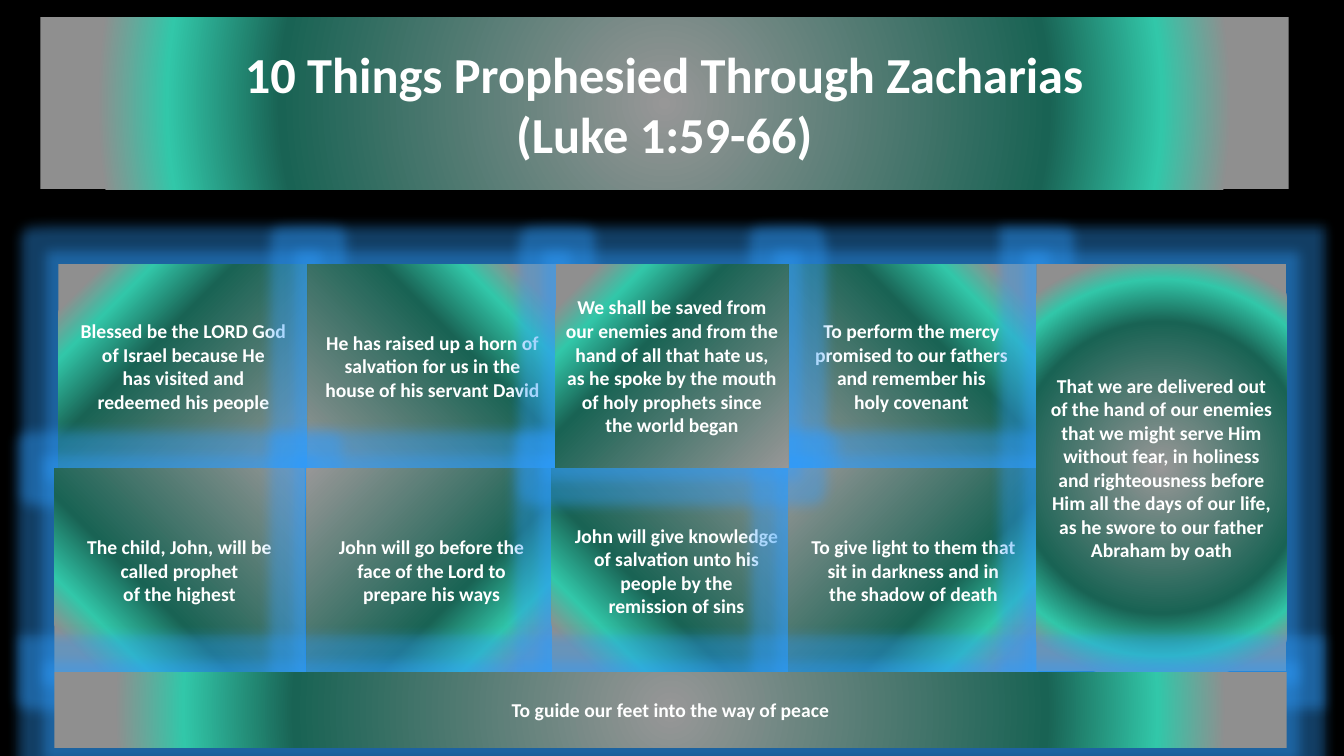
from dataclasses import dataclass

from pptx import Presentation
from pptx.dml.color import RGBColor
from pptx.enum.shapes import MSO_SHAPE as Shape
from pptx.enum.text import MSO_ANCHOR as Anchor, PP_ALIGN as Align
from pptx.oxml import parse_xml
from pptx.oxml.ns import nsdecls, qn
from pptx.util import Inches, Pt


@dataclass(frozen=True)
class Theme:
    """Colours, font and type sizes of the slide."""
    back: str = "000000"
    text: str = "FFFFFF"
    glow: str = "2E9CFC"
    stops: tuple = ((0, "979797"), (61, "196354"), (79, "32C7A9"), (90, "8F8F8F"))
    font: str = "Calibri"
    title: int = 36
    body: int = 14


THEME = Theme()
CENTRE = (50, 50, 50, 50)
BOTTOM_RIGHT = (100, 100, 0, 0)
BOTTOM_LEFT = (0, 100, 100, 0)
TOP_RIGHT = (100, 0, 0, 100)
TOP_LEFT = (0, 0, 100, 100)

TOP, ROW, CARD_W, CARD_H = 2.62, 2.03, 2.48, 2.02
CARDS = [
    (0.58, 0, CARD_W, BOTTOM_RIGHT, ["Blessed be the LORD God", "of Israel because He",
                                     "has visited and", "redeemed his people"]),
    (7.8, 0, CARD_W, BOTTOM_LEFT, ["To perform the mercy promised to our fathers",
                                   "and remember his", "holy covenant"]),
    (3.05, 0, CARD_W, BOTTOM_LEFT, ["He has raised up a horn of salvation for us in the",
                                    "house of his servant David"]),
    (0.54, 1, CARD_W, TOP_RIGHT, ["The child, John, will be called prophet",
                                  "of the highest"]),
    (3.04, 1, CARD_W, TOP_LEFT, ["John will go before the", "face of the Lord to",
                                 "prepare his ways"]),
    (5.47, 1, CARD_W, TOP_RIGHT, ["John will give knowledge", "of salvation unto his",
                                  "people by the", "remission of sins"]),
    (7.82, 1, CARD_W, TOP_LEFT, ["To give light to them that", "sit in darkness and in",
                                 "the shadow of death"]),
]
MIDDLE_CARD = (5.51, 0, 2.31, BOTTOM_RIGHT, [
    "We shall be saved from our enemies and from the hand of all that hate us, "
    "as he spoke by the mouth", "of holy prophets since", "the world began"])
OATH = ["That we are delivered out of the hand of our enemies that we might serve Him "
        "without fear, in holiness and righteousness before Him all the days of our life, "
        "as he swore to our father Abraham by oath"]
PEACE = ["To guide our feet into the way of peace"]


def colour_xml(colour, alpha=100):
    """Return a colour element with its opacity in percent."""
    return f'<a:srgbClr val="{colour}"><a:alpha val="{alpha * 1000}"/></a:srgbClr>'


def add_gradient(sp, focus):
    """Fill a shape with the theme's circular gradient around a focus."""
    stops = "".join(f'<a:gs pos="{pos * 1000}">{colour_xml(colour)}</a:gs>'
                    for pos, colour in THEME.stops)
    sides = " ".join(f'{side}="{value * 1000}"' for side, value in zip("ltrb", focus))
    sp._element.spPr.find(qn("a:prstGeom")).addnext(parse_xml(
        f'<a:gradFill {nsdecls("a")} rotWithShape="1"><a:gsLst>{stops}</a:gsLst>'
        f'<a:path path="circle"><a:fillToRect {sides}/></a:path></a:gradFill>'))


def add_effect(sp, tag, attributes, colour, alpha):
    """Give a shape one effect, such as a glow or a shadow."""
    values = " ".join(f'{name}="{int(value)}"' for name, value in attributes.items())
    sp._element.spPr.find(qn("a:effectLst")).append(parse_xml(
        f'<a:{tag} {nsdecls("a")} {values}>{colour_xml(colour, alpha)}</a:{tag}>'))


def add_panel(s, box, lines, focus=CENTRE, size=THEME.body):
    """Add a gradient rectangle with centred bold lines."""
    sp = s.shapes.add_shape(Shape.RECTANGLE, *map(Inches, box))
    sp.shadow.inherit = False
    sp.line.fill.background()
    add_gradient(sp, focus)
    tf = sp.text_frame
    tf.word_wrap = True
    tf.vertical_anchor = Anchor.MIDDLE
    tf.text = "\n".join(lines)
    for p in tf.paragraphs:
        p.alignment = Align.CENTER
        for r in p.runs:
            for name, value in dict(name=THEME.font, size=Pt(size), bold=True).items():
                setattr(r.font, name, value)
            r.font.color.rgb = RGBColor.from_string(THEME.text)
    return sp


def add_title(s, box):
    """Add the title banner with its soft shadow."""
    sp = add_panel(s, box, ["10 Things Prophesied Through Zacharias", "(Luke 1:59-66)"],
                   size=THEME.title)
    add_effect(sp, "outerShdw", dict(blurRad=Pt(15), dist=Pt(18), dir=45 * 60000),
               THEME.back, 30)


def add_glowing(s, box, lines, focus=CENTRE):
    """Add a panel surrounded by a blue glow."""
    sp = add_panel(s, box, lines, focus)
    add_effect(sp, "glow", dict(rad=Inches(0.25)), THEME.glow, 40)


def add_card(s, left, row, width, focus, lines):
    """Add one prophecy card in its row."""
    add_glowing(s, (left, TOP + row * ROW, width, CARD_H), lines, focus)


def add_prophecies(s):
    """Add the cards, the tall panel and the closing bar."""
    for card in CARDS:
        add_card(s, *card)
    add_glowing(s, (10.28, TOP, CARD_W, 2 * CARD_H), OATH)
    add_glowing(s, (0.54, 6.67, 12.22, 0.75), PEACE)
    add_card(s, *MIDDLE_CARD)


def main():
    """Build and save the slide."""
    prs = Presentation()
    prs.slide_width, prs.slide_height = Inches(13.33), Inches(7.5)
    s = prs.slides.add_slide(prs.slide_layouts[6])
    fill = s.background.fill
    fill.solid()
    fill.fore_color.rgb = RGBColor.from_string(THEME.back)
    add_title(s, (0.4, 0.17, 12.38, 1.71))
    add_prophecies(s)
    prs.save("out.pptx")


if __name__ == "__main__":
    main()
